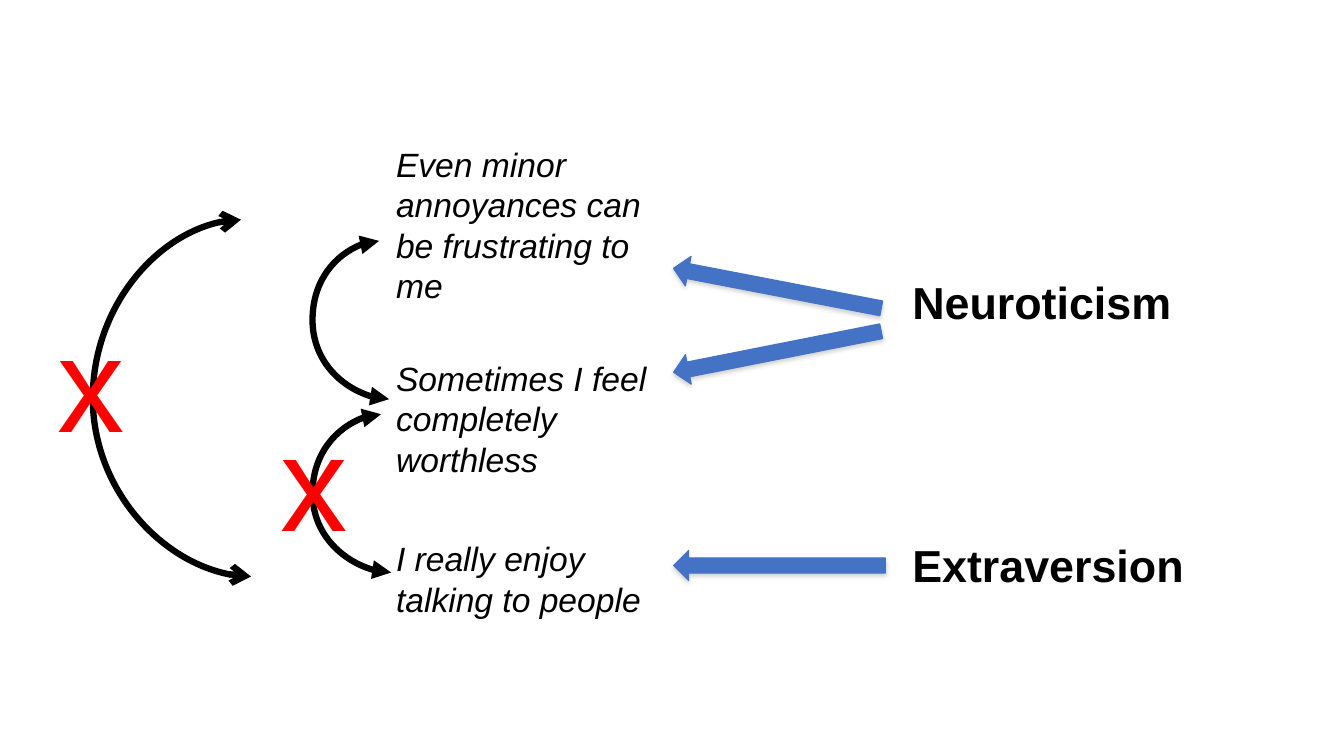
from typing import NamedTuple

from lxml.etree import SubElement
from pptx import Presentation
from pptx.dml.color import RGBColor
from pptx.enum.shapes import MSO_CONNECTOR, MSO_SHAPE
from pptx.enum.text import MSO_AUTO_SIZE
from pptx.oxml.ns import qn
from pptx.slide import Slide
from pptx.util import Inches, Pt

BLACK = RGBColor(0x00, 0x00, 0x00)
RED = RGBColor(0xFF, 0x00, 0x00)
BLUE = RGBColor(0x44, 0x72, 0xC4)
SHADOW_GRAY = RGBColor(0x80, 0x80, 0x80)
FONT = "Arial"
TRAIT_LEFT = 8.95
ITEM_LEFT = 3.83
CURVE_RUN = 0.1


class TextStyle(NamedTuple):
    size: int
    color: RGBColor = BLACK
    bold: bool = False
    italic: bool = False


class Label(NamedTuple):
    text: str
    left: float
    top: float
    width: float
    height: float
    style: TextStyle


class TraitArrow(NamedTuple):
    left: float
    top: float
    rotation: float


class CorrelationCurve(NamedTuple):
    left: float
    top: float
    height: float
    bulge: float
    arrowhead: str


TRAIT = TextStyle(32, bold=True)
ITEM = TextStyle(24, italic=True)
CROSS = TextStyle(96, color=RED)

LABELS = [
    Label("Neuroticism", TRAIT_LEFT, 2.68, 2.82, 0.64, TRAIT),
    Label("Extraversion", TRAIT_LEFT, 5.29, 2.93, 0.64, TRAIT),
    Label("Even minor annoyances can be frustrating to me", ITEM_LEFT, 1.38, 2.84, 1.72, ITEM),
    Label("Sometimes I feel completely worthless", ITEM_LEFT, 3.5, 2.84, 1.31, ITEM),
    Label("I really enjoy talking to people", ITEM_LEFT, 5.29, 2.67, 0.91, ITEM),
]
TRAIT_ARROWS = [
    TraitArrow(6.66, 2.71, 190.9),
    TraitArrow(6.66, 3.34, 168.8),
    TraitArrow(6.68, 5.46, 180),
]
CURVES = [
    CorrelationCurve(3.76, 2.39, 1.57, 0.66, "triangle"),
    CorrelationCurve(3.78, 4.11, 1.57, 0.68, "triangle"),
    CorrelationCurve(2.39, 2.18, 3.54, 1.47, "arrow"),
]
CROSSES = [
    Label("x", 2.68, 3.89, 0.92, 1.72, CROSS),
    Label("x", 0.47, 2.91, 0.92, 1.72, CROSS),
]


def draw_label(page: Slide, label: Label) -> None:
    box = page.shapes.add_textbox(
        Inches(label.left), Inches(label.top), Inches(label.width), Inches(label.height)
    )
    frame = box.text_frame
    frame.word_wrap = True
    frame.auto_size = MSO_AUTO_SIZE.SHAPE_TO_FIT_TEXT
    span = frame.paragraphs[0].add_run()
    span.text = label.text
    span.font.name = FONT
    span.font.size = Pt(label.style.size)
    span.font.bold = label.style.bold
    span.font.italic = label.style.italic
    span.font.color.rgb = label.style.color


def draw_trait_arrow(page: Slide, arrow: TraitArrow) -> None:
    shape = page.shapes.add_shape(
        MSO_SHAPE.RIGHT_ARROW, Inches(arrow.left), Inches(arrow.top), Inches(2.1), Inches(0.3)
    )
    shape.rotation = arrow.rotation
    shape.fill.solid()
    shape.fill.fore_color.rgb = BLUE
    shape.line.color.rgb = BLUE
    shape.line.width = Pt(0.75)
    shape.shadow.inherit = False
    effects = shape._element.spPr.find(qn("a:effectLst"))
    shadow = SubElement(
        effects, qn("a:outerShdw"), blurRad=str(Pt(3.1)), dist=str(Pt(1.8)),
        dir="5400000", rotWithShape="0",
    )
    color = SubElement(shadow, qn("a:srgbClr"), val=str(SHADOW_GRAY))
    SubElement(color, qn("a:alpha"), val="35000")


def draw_curve(page: Slide, curve: CorrelationCurve) -> None:
    connector = page.shapes.add_connector(
        MSO_CONNECTOR.CURVE,
        Inches(curve.left), Inches(curve.top),
        Inches(curve.left + CURVE_RUN), Inches(curve.top + curve.height),
    )
    connector.line.color.rgb = BLACK
    connector.line.width = Pt(4.5)
    properties = connector._element.spPr
    adjustments = properties.find(qn("a:prstGeom")).find(qn("a:avLst"))
    bend = round(-curve.bulge / CURVE_RUN * 100000)
    SubElement(adjustments, qn("a:gd"), name="adj1", fmla=f"val {bend}")
    outline = properties.find(qn("a:ln"))
    for end in ("a:headEnd", "a:tailEnd"):
        SubElement(outline, qn(end), type=curve.arrowhead)
    SubElement(properties, qn("a:effectLst"))


def main() -> None:
    deck = Presentation()
    deck.slide_width = Inches(13.33)
    deck.slide_height = Inches(7.5)
    page = deck.slides.add_slide(deck.slide_layouts[6])
    for label in LABELS:
        draw_label(page, label)
    for arrow in TRAIT_ARROWS:
        draw_trait_arrow(page, arrow)
    for curve in CURVES:
        draw_curve(page, curve)
    for cross in CROSSES:
        draw_label(page, cross)
    deck.save("out.pptx")


if __name__ == "__main__":
    main()
